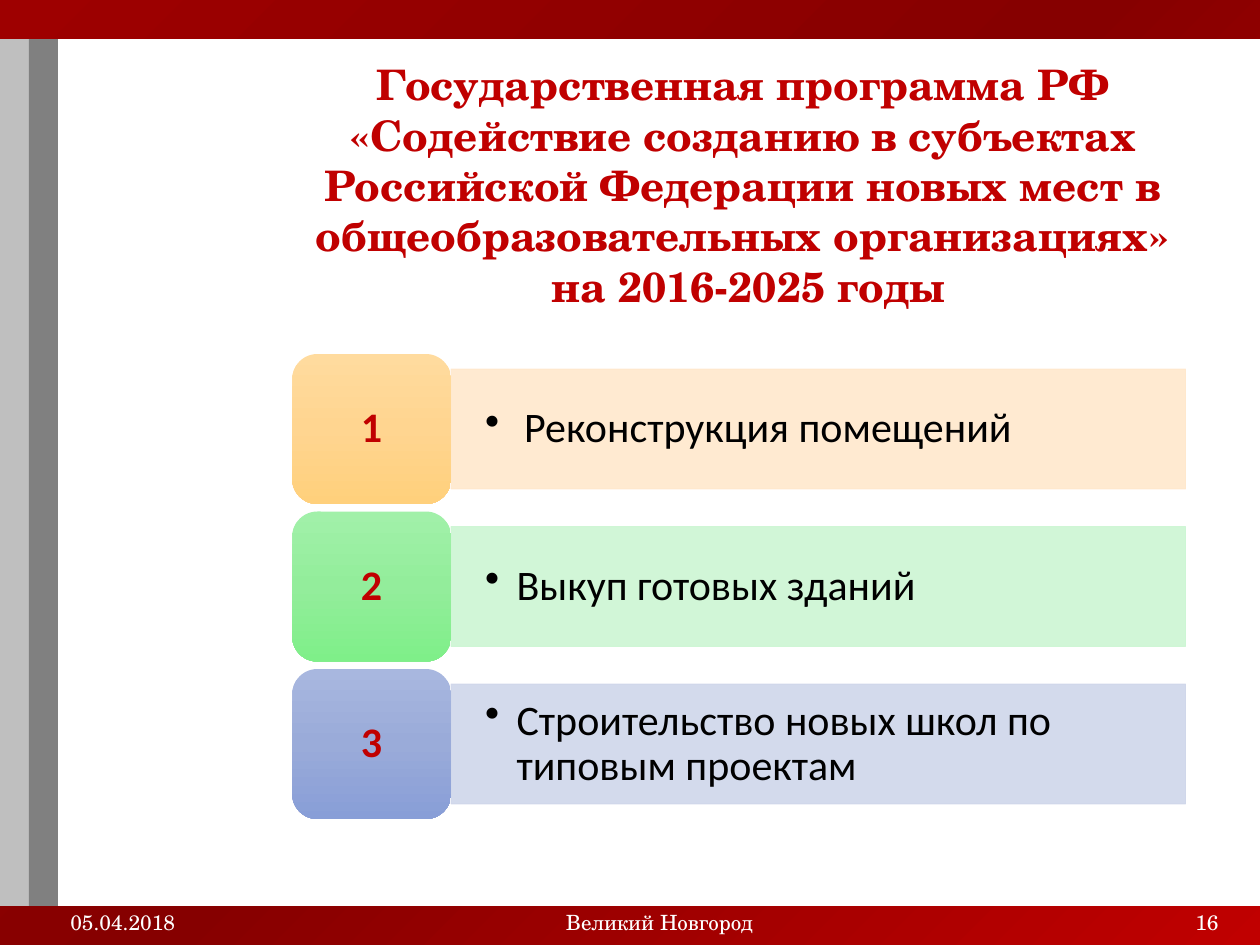
"""Builds the slide about the state programme for new school places."""
from pptx import Presentation
from pptx.dml.color import RGBColor
from pptx.enum.shapes import MSO_SHAPE as Kind
from pptx.enum.text import MSO_ANCHOR as Anchor, PP_ALIGN as Align
from pptx.oxml import parse_xml
from pptx.oxml.ns import nsdecls, qn
from pptx.util import Inches, Pt


def style(frame, text, size, font, color, align, bold=False):
    frame.word_wrap = True
    para = frame.paragraphs[0]
    para.text = text
    para.alignment = align
    para.font.size = Pt(size)
    para.font.name = font
    para.font.bold = bold
    para.font.color.rgb = RGBColor.from_string(color)
    return para


def shade(props, colors, course):
    stops = "".join(
        f'<a:gs pos="{pos}"><a:srgbClr val="{color}"/></a:gs>'
        for pos, color in zip((0, 50000, 100000), colors))
    grad = parse_xml(f'<a:gradFill {nsdecls("a")} rotWithShape="1">'
                     f'<a:gsLst>{stops}</a:gsLst>{course}</a:gradFill>')
    props.replace(props.find(qn("a:solidFill")), grad)


deck = Presentation()
deck.slide_width, deck.slide_height = Inches(10), Inches(7.5)
slide = deck.slides.add_slide(deck.slide_layouts[6])
shapes = slide.shapes
serif, sans, red = "TeX Gyre Schola", "Calibri", "C00000"

slide.background.fill.solid()
shade(slide.element.find(".//" + qn("p:bgPr")), (red, "860000", "9E0000"),
      '<a:path path="circle"><a:fillToRect l="100000" t="100000"/></a:path>')

for left, width, color in ((0.45, 9.55, "FFFFFF"), (0, 0.23, "BFBFBF"),
                           (0.23, 0.23, "808080")):
    panel = shapes.add_shape(Kind.RECTANGLE, Inches(left), Inches(0.31),
                             Inches(width), Inches(6.88))
    panel.shadow.inherit = False
    panel.fill.solid()
    panel.fill.fore_color.rgb = RGBColor.from_string(color)
    panel.line.fill.background()

for left, width, text, align in ((7.44, 2.33, "16", Align.RIGHT),
                                 (0.46, 2.33, "05.04.2018", Align.LEFT),
                                 (3.65, 3.17, "Великий Новгород", Align.CENTER)):
    foot = shapes.add_textbox(Inches(left), Inches(7.17), Inches(width), Inches(0.29))
    style(foot.text_frame, text, 12, serif, "FFFFFF", align)

title = shapes.add_textbox(Inches(2.01), Inches(0.44), Inches(7.77), Inches(2.05))
title.text_frame.vertical_anchor = Anchor.MIDDLE
style(title.text_frame,
      "Государственная программа РФ «Содействие созданию в субъектах Российской "
      "Федерации новых мест в общеобразовательных организациях»\v на 2016-2025 годы",
      24, serif, red, Align.CENTER, True)

steps = (
    ("Реконструкция помещений", 0.31, "FFE8CC", ("FFDB9E", "FFD590", "FFD07C")),
    ("Выкуп готовых зданий", 0.25, "CCF6D3", ("A1F0A9", "93ED9B", "7FEF89")),
    ("Строительство новых школ по типовым проектам", 0.25, "CFD6EA",
     ("A8B7DF", "9AABD9", "889ED7")),
)
for row, (text, indent, pale, tones) in enumerate(steps):
    top = 2.81 + 1.25 * row
    bar = shapes.add_shape(Kind.RECTANGLE, Inches(3.58), Inches(top + 0.12),
                           Inches(5.83), Inches(0.95))
    bar.shadow.inherit = False
    bar.fill.solid()
    bar.line.width = Pt(0.5)
    for ink in (bar.fill.fore_color, bar.line.color):
        ink.rgb = RGBColor.from_string(pale)
    for tint in bar.element.spPr.iter(qn("a:srgbClr")):
        tint.append(parse_xml(f'<a:alpha {nsdecls("a")} val="90000"/>'))
    frame = bar.text_frame
    frame.vertical_anchor = Anchor.MIDDLE
    frame.margin_left = frame.margin_right = Inches(0.27)
    frame.margin_top = frame.margin_bottom = Inches(0.14)
    props = frame.paragraphs[0]._p.get_or_add_pPr()
    props.set("marL", str(Inches(indent)))
    props.set("indent", str(-Inches(indent)))
    props.append(parse_xml(f'<a:buChar {nsdecls("a")} char="•"/>'))
    style(frame, text, 24, sans, "000000", Align.LEFT).line_spacing = 0.9

    badge = shapes.add_shape(Kind.ROUNDED_RECTANGLE, Inches(2.32), Inches(top),
                             Inches(1.26), Inches(1.19))
    badge.shadow.inherit = False
    badge.line.fill.background()
    badge.fill.solid()
    shade(badge.element.spPr, tones, '<a:lin ang="5400000" scaled="0"/>')
    badge.text_frame.vertical_anchor = Anchor.MIDDLE
    label = style(badge.text_frame, str(row + 1), 24, sans, red, Align.CENTER, True)
    label.line_spacing = 0.9

deck.save("out.pptx")
